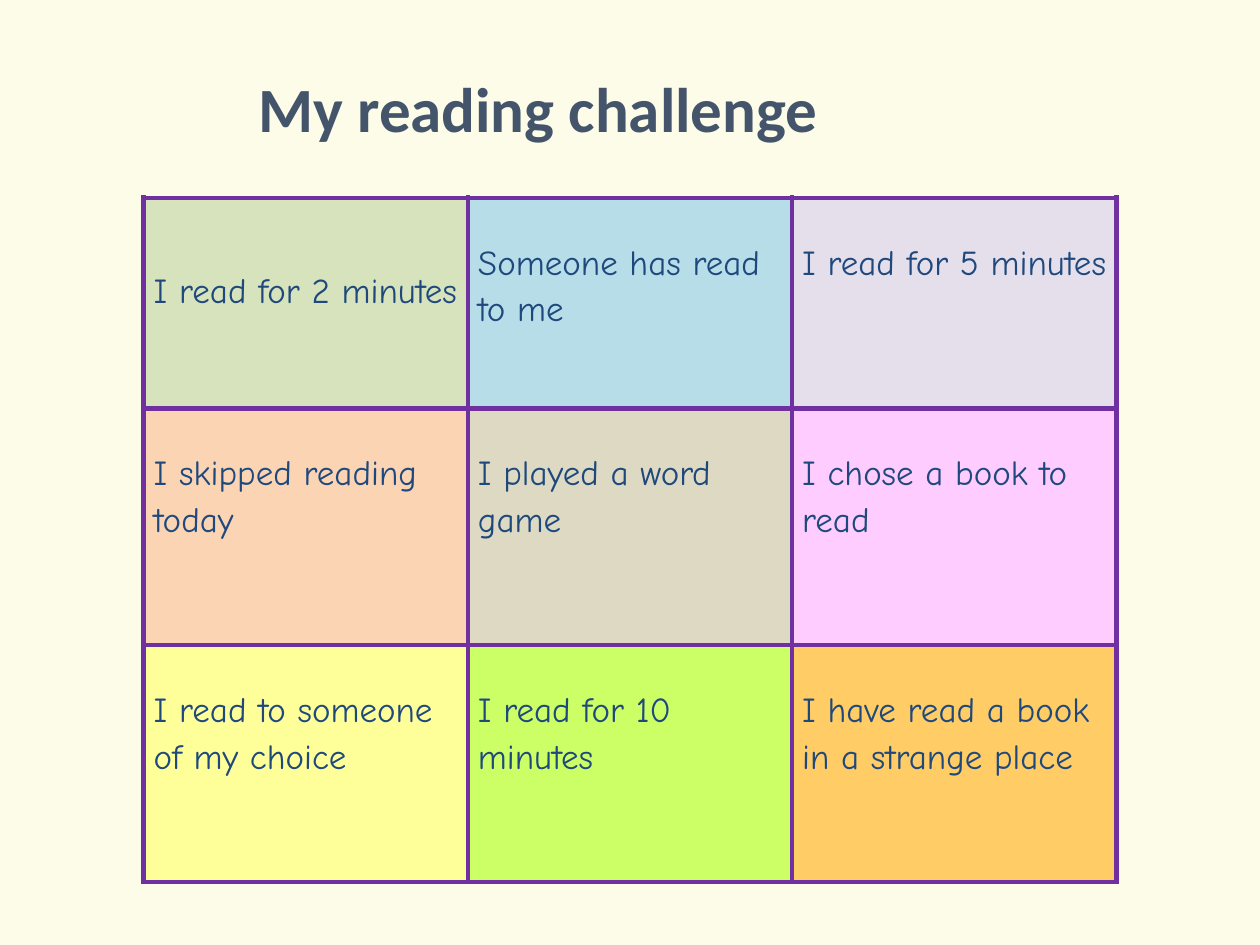
from lxml import etree
from pptx import Presentation
from pptx.dml.color import RGBColor
from pptx.enum.text import PP_ALIGN
from pptx.oxml.ns import qn
from pptx.util import Inches, Pt

CENTER = PP_ALIGN.CENTER
BORDER = "7030A0"
INK = "1F497D"
ROWS = [
    (1.67, [("I read for 2 minutes", "D6E3BC"),
            ("Someone has read to me", "B6DDE8"),
            ("I read for 5 minutes", "E5DFEC")]),
    (1.88, [("I skipped reading today", "FBD4B4"),
            ("I played a word game", "DDD9C3"),
            ("I chose a book to read", "FFCCFF")]),
    (1.88, [("I read to someone of my choice", "FFFF99"),
            ("I read for 10 minutes", "CCFF66"),
            ("I have read a book in a strange place", "FFCC66")]),
]


def paint(fill, color):
    fill.solid()
    fill.fore_color.rgb = RGBColor.from_string(color)


def style(font, name, size, color, bold=False):
    font.name = name
    font.size = Pt(size)
    font.bold = bold
    font.color.rgb = RGBColor.from_string(color)


def frame(cell, color, width):
    props = cell._tc.get_or_add_tcPr()
    for i, side in enumerate(("lnL", "lnR", "lnT", "lnB")):
        line = etree.Element(qn(f"a:{side}"), w=str(Pt(width)))
        fill = etree.SubElement(line, qn("a:solidFill"))
        etree.SubElement(fill, qn("a:srgbClr"), val=color)
        props.insert(i, line)


def add_title(slide, text):
    box = slide.shapes.add_textbox(Inches(1.17), Inches(0.5), Inches(6.2), Inches(0.71))
    box.text_frame.word_wrap = True
    para = box.text_frame.paragraphs[0]
    para.text = text
    para.alignment = CENTER
    style(para.font, "Calibri", 36, "44546A", True)


def fill_cell(cell, text, color, top):
    paint(cell.fill, color)
    frame(cell, BORDER, 3)
    cell.margin_left = Inches(0.08)
    cell.margin_right = Inches(0.04)
    cell.margin_top = Inches(top)
    cell.margin_bottom = 0
    para = cell.text_frame.paragraphs[0]
    para.text = text
    para.line_spacing = 1.15
    style(para.font, "Comic Neue", 20, INK)


def add_grid(slide, rows):
    high = sum(height for height, _ in rows)
    table = slide.shapes.add_table(
        len(rows), 3, Inches(1.14), Inches(1.57), Inches(7.72), Inches(high)).table
    for r, (height, items) in enumerate(rows):
        table.rows[r].height = Inches(height)
        for c, (text, color) in enumerate(items):
            top = 0.54 if r == c == 0 else 0.32
            fill_cell(table.cell(r, c), text, color, top)


def main():
    deck = Presentation()
    deck.slide_width = Inches(10)
    deck.slide_height = Inches(7.5)
    slide = deck.slides.add_slide(deck.slide_layouts[6])
    paint(slide.background.fill, "FCFCE8")
    add_grid(slide, ROWS)
    add_title(slide, "My reading challenge")
    deck.save("out.pptx")


if __name__ == "__main__":
    main()
